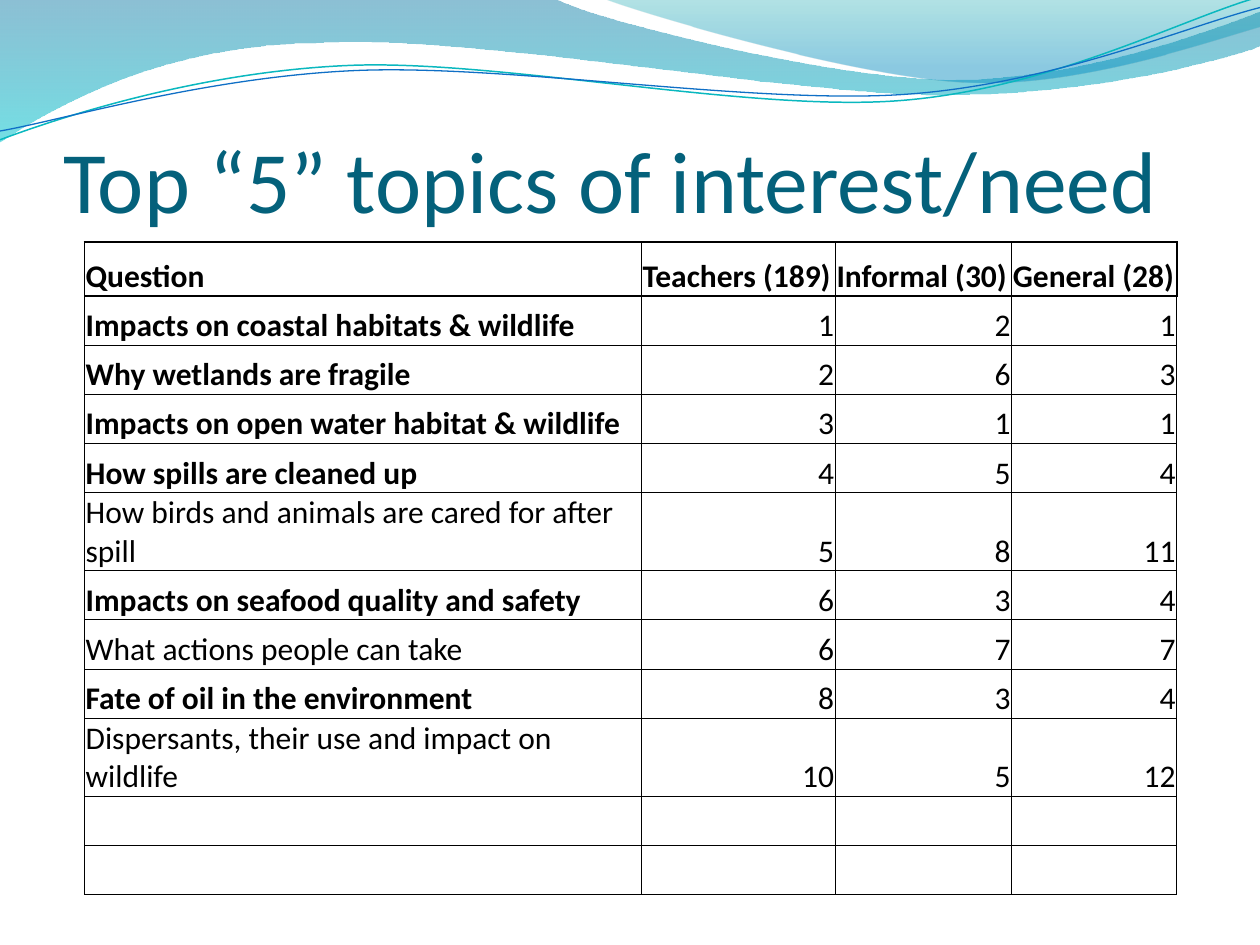
from lxml.etree import SubElement
from pptx import Presentation
from pptx.dml.color import RGBColor
from pptx.enum.text import MSO_ANCHOR as Anchor, MSO_AUTO_SIZE as Fit, PP_ALIGN as Align
from pptx.oxml.ns import qn
from pptx.util import Inches, Pt

BLACK = RGBColor(0, 0, 0)
TITLE = RGBColor(0x04, 0x61, 0x7B)
NAVY = RGBColor(0x00, 0x74, 0xA1)
AQUA = RGBColor(0x00, 0xC6, 0xCF)
TEAL = RGBColor(0x00, 0xA1, 0xA9)
SKY = RGBColor(0x00, 0x8B, 0xBF)
CYAN = RGBColor(0x0A, 0xB8, 0xBF)
BLUE = RGBColor(0x0F, 0x6F, 0xC6)


def draw(start, parts, closed):
    """Draw a chain of lines (one point) and Bezier curves (three points)."""
    form = slide.shapes.build_freeform(*map(Inches, start))
    form.add_line_segments([tuple(map(Inches, part[-2:])) for part in parts], close=closed)
    shape = form.convert_to_shape()
    shape.shadow.inherit = False
    # Turn the straight segments that have control points into curves
    for seg, part in zip(list(shape._element.iter(qn("a:lnTo"))), parts):
        if len(part) == 6:
            seg.tag = qn("a:cubicBezTo")
            for i in (0, 2):
                point = SubElement(seg, qn("a:pt"), x=str(Inches(part[i]) - shape.left),
                                   y=str(Inches(part[i + 1]) - shape.top))
                seg.insert(i // 2, point)
    return shape


def edge(cell, side, width):
    """Set one cell border; width 0 hides it."""
    line = SubElement(cell._tc.get_or_add_tcPr(), qn("a:ln" + side), w=str(Pt(width)))
    if width:
        fill = SubElement(line, qn("a:solidFill"))
        SubElement(fill, qn("a:srgbClr"), val=str(BLACK))
    else:
        SubElement(line, qn("a:noFill"))


prs = Presentation()
prs.slide_width, prs.slide_height = Inches(10), Inches(7.5)
slide = prs.slides.add_slide(prs.slide_layouts[5])

# Filled waves: start, parts, gradient stops (position, colour, opacity in %)
waves = [
    ((0, -0.01),
     [(4.4, -0.01), (4.76, 0.17, 6.64, 0.63, 7.58, 0.63), (8.53, 0.63, 9.58, 0.26, 10, 0.09),
      (10.01, 0.36), (9.83, 0.44, 8.7, 0.76, 7.46, 0.75), (6.22, 0.75, 3.82, 0.28, 2.57, 0.34),
      (1.29, 0.35, 0.46, 0.83, -0.01, 1.13)],
     [(0, NAVY, 45), (1, AQUA, 55)]),
    ((4.79, -0.01),
     [(5.09, 0.11, 6.82, 0.62, 7.69, 0.65), (8.56, 0.69, 9.61, 0.32, 10, 0.21), (10, 0)],
     [(0, TEAL, 30), (0.8, SKY, 45)]),
]
for start, parts, stops in waves:
    wave = draw(start, parts, True)
    wave.line.fill.background()
    wave.fill.gradient()
    wave.fill.gradient_angle = 270
    for stop, (pos, color, alpha) in zip(wave.fill.gradient_stops, stops):
        stop.position = pos
        stop.color.rgb = color
        tint = stop._gs.find(qn("a:srgbClr"))
        SubElement(tint, qn("a:alpha"), val=str(alpha * 1000))

# Thin wave lines
lines = [
    ((0, 1.11), [(0.48, 0.93, 1.58, 0.57, 2.77, 0.52), (3.95, 0.47, 5.93, 0.89, 7.13, 0.8),
                 (8.33, 0.71, 9.38, 0.15, 9.98, -0.02)], CYAN, 0.85),
    ((0, 1.04), [(0.47, 0.96, 1.64, 0.61, 2.83, 0.56), (4.03, 0.51, 5.97, 0.83, 7.17, 0.75),
                 (8.36, 0.67, 9.41, 0.21, 10, 0.06)], BLUE, 0.75),
]
for start, parts, color, width in lines:
    wave = draw(start, parts, False)
    wave.fill.background()
    wave.line.color.rgb = color
    wave.line.width = Pt(width)

# Title, in front of the waves
title = slide.shapes.title
slide.shapes._spTree.append(title._element)
title.left, title.top, title.width, title.height = map(Inches, (0.5, 0.58, 9, 1.25))
frame = title.text_frame
frame.text = "Top “5” topics of interest/need"
frame.auto_size = Fit.NONE
frame.vertical_anchor = Anchor.BOTTOM
frame.margin_left = frame.margin_right = frame.margin_bottom = 0
frame.margin_top = Inches(0.05)
para = frame.paragraphs[0]
para.alignment = Align.LEFT
para.font.size, para.font.name = Pt(50), "Calibri"
para.font.color.rgb = TITLE

# Table: an open row on top, the header, the topics (bold or not), two empty rows
blank = ("", "", "", "", False)
rows = [
    blank,
    ("Question", "Teachers (189)", "Informal (30)", "General (28)", True),
    ("Impacts on coastal habitats & wildlife", 1, 2, 1, True),
    ("Why wetlands are fragile", 2, 6, 3, True),
    ("Impacts on open water habitat & wildlife", 3, 1, 1, True),
    ("How spills are cleaned up", 4, 5, 4, True),
    ("How birds and animals are cared for after spill", 5, 8, 11, False),
    ("Impacts on seafood quality and safety", 6, 3, 4, True),
    ("What actions people can take", 6, 7, 7, False),
    ("Fate of oil in the environment", 8, 3, 4, True),
    ("Dispersants, their use and impact on wildlife", 10, 5, 12, False),
    blank,
    blank,
]
tall = {0: 0.5, 1: 0.43}
table = slide.shapes.add_table(len(rows), 4, Inches(0.67), Inches(1.42),
                               Inches(8.67), Inches(5.67)).table
table.first_row = table.horz_banding = False
for col, width in zip(table.columns, (4.42, 1.54, 1.4, 1.31)):
    col.width = Inches(width)
for r, (*texts, bold) in enumerate(rows):
    table.rows[r].height = Inches(tall.get(r, 0.39))
    for c, text in enumerate(texts):
        cell = table.cell(r, c)
        cell.text = str(text)
        cell.vertical_anchor = Anchor.BOTTOM
        cell.margin_left = cell.margin_right = cell.margin_top = Inches(0.01)
        cell.margin_bottom = 0
        para = cell.text_frame.paragraphs[0]
        para.alignment = Align.RIGHT if r > 1 and c else Align.LEFT
        para.font.size, para.font.name = Pt(18), "Calibri"
        para.font.bold = bold and (r == 1 or c == 0)
        para.font.color.rgb = BLACK
        side = (0, 1)[r] if r < 2 else 0.5
        top = (0, 1, 1)[r] if r < 3 else 0.5
        for name, width in zip("LRTB", (side, side, top, 1 if r < 2 else 0.5)):
            edge(cell, name, width)
        cell.fill.background()

prs.save("out.pptx")
